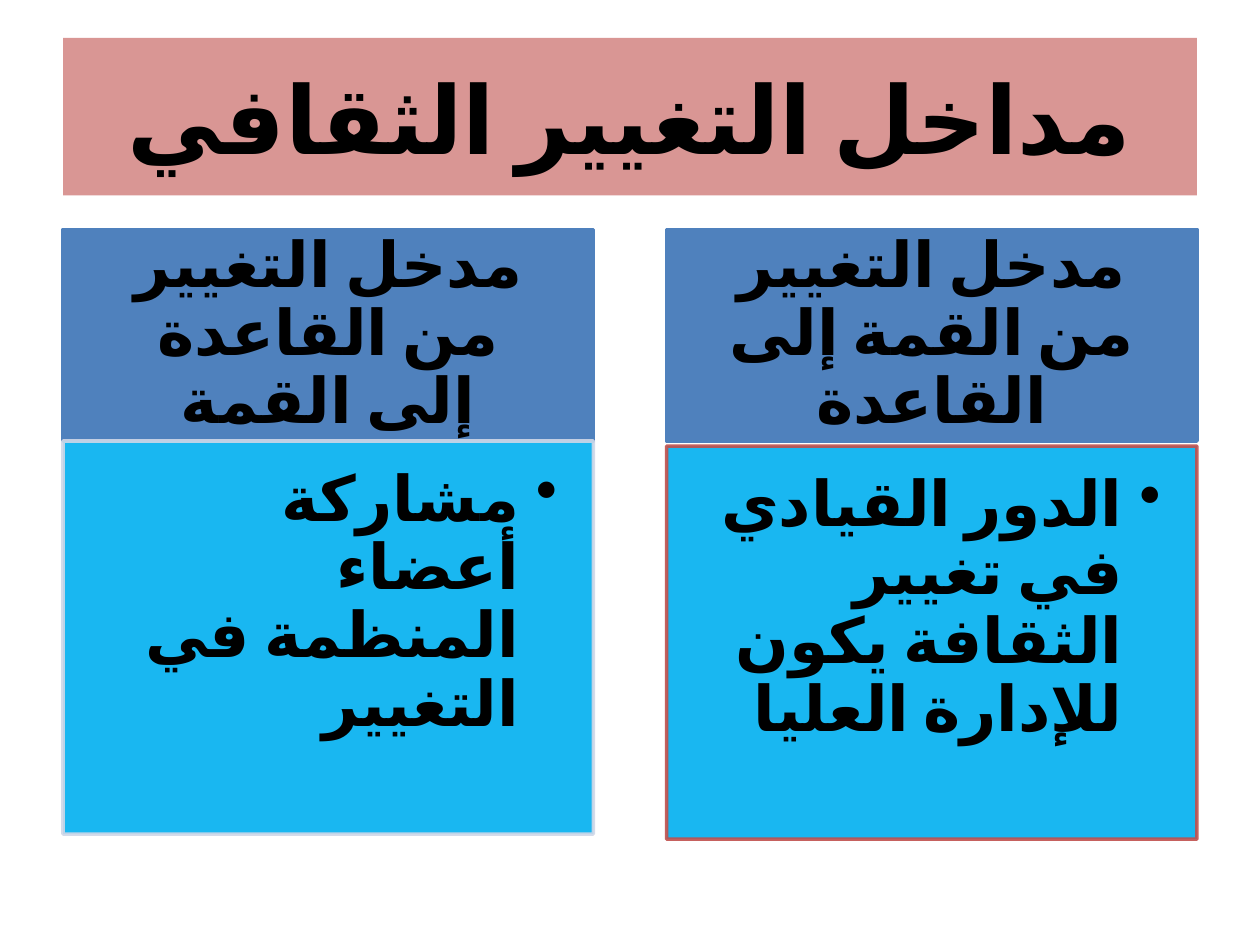
from lxml.etree import SubElement
from pptx import Presentation
from pptx.dml.color import RGBColor
from pptx.enum.lang import MSO_LANGUAGE_ID
from pptx.enum.shapes import MSO_SHAPE
from pptx.enum.text import MSO_ANCHOR, MSO_AUTO_SIZE, PP_ALIGN
from pptx.oxml.ns import qn
from pptx.util import Inches, Pt

BLACK = RGBColor(0x00, 0x00, 0x00)
ROSE = RGBColor(0xD9, 0x96, 0x94)
BLUE = RGBColor(0x4F, 0x81, 0xBD)
SKY = RGBColor(0x00, 0xB0, 0xF0)
PALE = RGBColor(0xD0, 0xD8, 0xE8)
RED = RGBColor(0xC0, 0x50, 0x4D)

COLUMN_WIDTH = 4.21
HEADER_TOP, HEADER_HEIGHT = 1.82, 1.68
BODY_HEIGHT = 3.12

# left, body top, body border, header text, body text
COLUMNS = [
    (0.5, 3.5, PALE, "مدخل التغيير من القاعدة إلى القمة",
     "مشاركة أعضاء المنظمة في التغيير"),
    (5.29, 3.54, RED, "مدخل التغيير من القمة إلى القاعدة",
     "الدور القيادي في تغيير الثقافة يكون للإدارة العليا"),
]


def write_text(shape, text, size=36, font="Calibri", align=PP_ALIGN.CENTER,
               anchor=MSO_ANCHOR.MIDDLE, insets=None, line_spacing=None,
               space_after=None, right_to_left=False, bullet=False):
    frame = shape.text_frame
    frame.word_wrap = True
    frame.auto_size = MSO_AUTO_SIZE.NONE
    frame.vertical_anchor = anchor
    if insets:
        (frame.margin_left, frame.margin_top,
         frame.margin_right, frame.margin_bottom) = map(Inches, insets)
    paragraph = frame.paragraphs[0]
    paragraph.alignment = align
    if line_spacing:
        paragraph.line_spacing = line_spacing
    if space_after is not None:
        paragraph.space_after = Pt(space_after)
    run = paragraph.add_run()
    run.text = text
    run.font.name = font
    run.font.size = Pt(size)
    run.font.bold = True
    run.font.color.rgb = BLACK
    # Arabic letters take the complex-script font
    run.font.language_id = MSO_LANGUAGE_ID.ARABIC
    SubElement(run._r.get_or_add_rPr(), qn("a:cs"), typeface=font)
    properties = paragraph._p.get_or_add_pPr()
    if right_to_left:
        properties.set("rtl", "1")
    if bullet:
        paragraph.level = 1
        properties.set("marL", str(Inches(0.31)))
        properties.set("indent", str(-Inches(0.31)))
        SubElement(properties, qn("a:buChar"), char="•")


def set_opacity(color_format, percent):
    """Add an alpha value to the solid colour of a fill or line."""
    for color in color_format._xPr.iter(qn("a:srgbClr")):
        SubElement(color, qn("a:alpha"), val=str(percent * 1000))


class SlideBuilder:
    def __init__(self, presentation):
        self.slide = presentation.slides.add_slide(presentation.slide_layouts[5])

    def title(self, text):
        title = self.slide.shapes.title
        title.left, title.top = Inches(0.5), Inches(0.3)
        title.width, title.height = Inches(9), Inches(1.25)
        title.fill.solid()
        title.fill.fore_color.rgb = ROSE
        write_text(title, text, size=54, right_to_left=True)

    def box(self, left, top, height, fill, border, opacity=None):
        shape = self.slide.shapes.add_shape(
            MSO_SHAPE.RECTANGLE, Inches(left), Inches(top),
            Inches(COLUMN_WIDTH), Inches(height))
        shape.shadow.inherit = False
        shape.fill.solid()
        shape.fill.fore_color.rgb = fill
        shape.line.color.rgb = border
        shape.line.width = Pt(2)
        if opacity:
            set_opacity(shape.fill, opacity)
            set_opacity(shape.line.fill, opacity)
        return shape

    def header(self, left, text):
        shape = self.box(left, HEADER_TOP, HEADER_HEIGHT, BLUE, BLUE)
        write_text(shape, text, insets=(0.28, 0.16, 0.28, 0.16),
                   line_spacing=0.9, space_after=12.6)

    def body(self, left, top, border, text):
        shape = self.box(left, top, BODY_HEIGHT, SKY, border, opacity=90)
        write_text(shape, text, align=PP_ALIGN.RIGHT, anchor=MSO_ANCHOR.TOP,
                   insets=(0.21, 0.21, 0.28, 0.32), line_spacing=0.9,
                   space_after=5.4, right_to_left=True, bullet=True)


def main():
    presentation = Presentation()
    presentation.slide_width, presentation.slide_height = Inches(10), Inches(7.5)
    builder = SlideBuilder(presentation)

    # Title band
    builder.title("مداخل التغيير الثقافي")

    # Two approaches side by side
    for left, body_top, border, header_text, body_text in COLUMNS:
        builder.header(left, header_text)
        builder.body(left, body_top, border, body_text)

    presentation.save("out.pptx")


if __name__ == "__main__":
    main()
